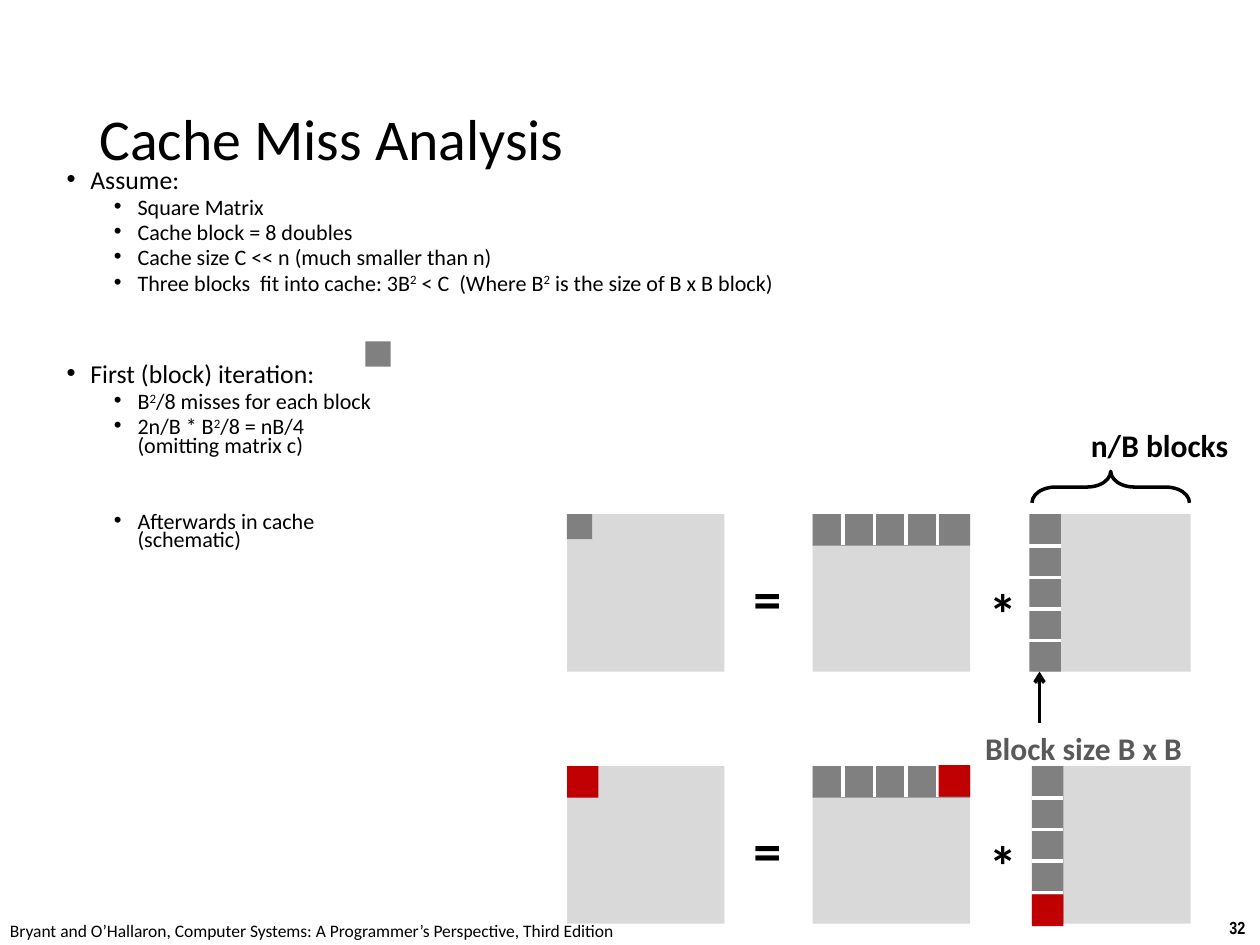
import pptx
import pptx.util
import pptx.dml.color
import pptx.enum.shapes
import pptx.enum.text
import pptx.oxml.ns
import lxml.etree

Pt = pptx.util.Pt
RGB = pptx.dml.color.RGBColor.from_string
Kind = pptx.enum.shapes.MSO_SHAPE
qn = pptx.oxml.ns.qn


class Theme:
    font, thin = "Calibri", "Arial Narrow"
    black, pale, gray, red = "000000", "D9D9D9", "808080", "C00000"
    white, label = "FFFFFF", "595959"
    title, head, item, sign, tag, foot = 33, 14.7, 12.6, 32, 18, 10


deck = pptx.Presentation()
deck.slide_width, deck.slide_height = Pt(720), Pt(540)
slide = deck.slides.add_slide(deck.slide_layouts[6])
shapes = slide.shapes


def write(area, words, size, bold=False, color=Theme.black, font=Theme.font, wrap=True):
    frame = shapes.add_textbox(*map(Pt, area)).text_frame
    frame.word_wrap = wrap
    para = frame.paragraphs[0]
    para.text = words
    para.font.name, para.font.size, para.font.bold = font, Pt(size), bold
    para.font.color.rgb = RGB(color)
    return frame


def block(left, top, wide, high, color):
    shape = shapes.add_shape(Kind.RECTANGLE, Pt(left), Pt(top), Pt(wide), Pt(high))
    shape.shadow.inherit = False
    shape.fill.solid()
    shape.fill.fore_color.rgb = RGB(color)
    shape.line.fill.background()


write((695.5, 520.5, 24.5, 19.4), "32", Theme.foot, True, font=Theme.thin, wrap=False)
write((-1.4, 522, 366, 19.4),
      "Bryant and O’Hallaron, Computer Systems: A Programmer’s Perspective, Third Edition",
      Theme.foot, wrap=False)
title = write((49.7, 28.8, 620.6, 104.4), "Cache Miss Analysis", Theme.title)
title.vertical_anchor = pptx.enum.text.MSO_ANCHOR.MIDDLE
title.paragraphs[0].line_spacing = 0.9

points = [
    (0, 7.5, "Assume:"),
    (1, 3.8, "Square Matrix"),
    (1, 3.8, "Cache block = 8 doubles"),
    (1, 3.8, "Cache size C << n (much smaller than n)"),
    (1, 3.8, "Three blocks  fit into cache: 3B|2| < C  (Where B|2| is the size of B x B block)"),
    (0, 41, "First (block) iteration:"),
    (1, 3.8, "B|2|/8 misses for each block"),
    (1, 3.8, "2n/B * B|2|/8 = nB/4|\n|(omitting matrix c)"),
    (1, 32.6, "Afterwards in cache|\n|(schematic)"),
]
body = shapes.add_textbox(Pt(31), Pt(95), Pt(622), Pt(240.5)).text_frame
body.word_wrap = True
for rank, (level, gap, words) in enumerate(points):
    para = body.add_paragraph() if rank else body.paragraphs[0]
    para.level, para.line_spacing, para.space_before = level, 0.7, Pt(gap)
    props = para._p.get_or_add_pPr()
    props.set("marL", str(Pt(13.5 + 27 * level)))
    props.set("indent", str(Pt(-13.5)))
    lxml.etree.SubElement(props, qn("a:buFont"), typeface="Arial")
    lxml.etree.SubElement(props, qn("a:buChar"), char="•")
    para.font.name = Theme.font
    para.font.size = Pt(Theme.item if level else Theme.head)
    para.font.color.rgb = RGB(Theme.black)
    for part in words.split("|"):
        if part == "\n":
            para.add_line_break()
            continue
        run = para.add_run()
        run.text = part
        if part == "2":
            run._r.get_or_add_rPr().set("baseline", "30000")

side, cell = 90, 18
left, mid, right = 324, 464.4, 590.4
lines = [(594, 413.3, 594, 383.8, Theme.black)]
block(208.8, 195.1, 14.4, 14.4, Theme.gray)
for top, strip in ((293.75, 588.2), (437.75, 589.7)):
    for start in (left, mid, right):
        block(start, top, side, side, Theme.pale)
    block(mid, top, side, cell, Theme.gray)
    block(strip, top, cell, side, Theme.gray)
    write((423.4, top + 24.5, 31, 46), "=", Theme.sign, True, wrap=False)
    write((558, top + 33.1, 31, 46), "*", Theme.sign, True, wrap=False)
    for step in range(1, 5):
        across, down = mid - 0.7 + cell * step, top + 0.4 + cell * step
        lines.append((across, top - 0.5, across, top + 17.5, Theme.white))
        lines.append((strip + cell, down, strip, down, Theme.white))
block(left, 293.75, 14.4, 14.4, Theme.gray)

for *ends, color in lines:
    line = shapes.add_connector(pptx.enum.shapes.MSO_CONNECTOR.STRAIGHT, *map(Pt, ends))
    line.line.width = Pt(2)
    line.line.color.rgb = RGB(color)
    if color == Theme.black:
        lxml.etree.SubElement(line.line._get_or_add_ln(), qn("a:tailEnd"), type="arrow")
    lxml.etree.SubElement(line._element.spPr, qn("a:effectLst"))

for start, top in ((left, 437.75), (536.4, 437.2), (589.7, 511.2)):
    block(start, top, cell, cell, Theme.red)

brace = shapes.add_shape(Kind.LEFT_BRACE, Pt(625.7), Pt(233.3), Pt(cell), Pt(side))
brace.shadow.inherit = False
brace.rotation = 90
brace._element.spPr.xfrm.set("flipV", "1")
brace.adjustments[0], brace.adjustments[1] = 0.75, 0.5
brace.fill.background()
brace.line.width = Pt(2)
brace.line.color.rgb = RGB(Theme.black)

write((555.8, 413.3, 128.2, 29), "Block size B x B", Theme.tag, True, Theme.label, wrap=False)
write((616.3, 239.8, 93.6, 29), "n/B blocks", Theme.tag, True, wrap=False)

deck.save("out.pptx")
